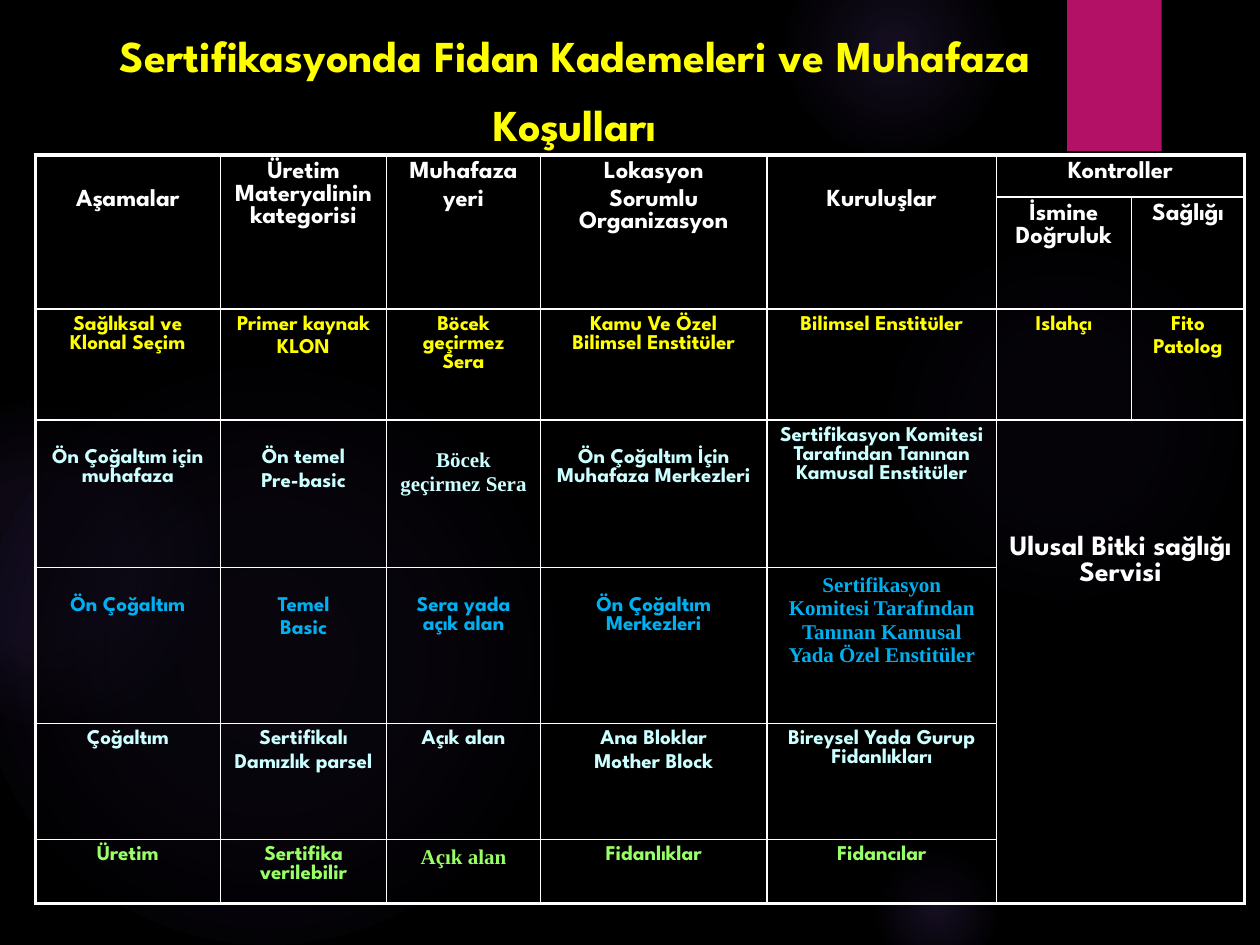
"""Build the slide on sapling stages and storage conditions in certification."""
from pptx import Presentation
from pptx.dml.color import RGBColor
from pptx.enum.shapes import MSO_SHAPE as Shape
from pptx.enum.text import MSO_ANCHOR as Anchor, PP_ALIGN as Align
from pptx.oxml import parse_xml
from pptx.oxml.ns import nsdecls, qn
from pptx.util import Inches, Pt


class Theme:
    black, white, yellow = "000000", "FFFFFF", "FFFF00"
    ice, blue, green = "CCFFFF", "00B0F0", "99FF66"
    glow, accent = "9B6BF2", "B31166"
    sans, serif = "League Spartan", "Times New Roman"
    title, service, header, body = 25.2, 16, 14, 12
    thick, thin = 2.25, 1


def write_text(frame, text, size, colour, font):
    frame.word_wrap = True
    frame.text = text
    for para in frame.paragraphs:
        para.alignment = Align.CENTER
        para.space_before = Pt(size * 0.2)
        for span in para.runs:
            span.font.size = Pt(size)
            span.font.bold = True
            span.font.name = font
            span.font.color.rgb = RGBColor.from_string(colour)


def style_cell(cell, edges):
    cell.fill.solid()
    cell.fill.fore_color.rgb = RGBColor.from_string(Theme.black)
    props = cell._tc.get_or_add_tcPr()
    colour = props.find(".//" + qn("a:srgbClr"))
    colour.append(parse_xml(f'<a:alpha {nsdecls("a")} val="50000"/>'))
    for place, (side, outer) in enumerate(edges.items()):
        width = Pt(Theme.thick if outer else Theme.thin)
        props.insert(place, parse_xml(
            f'<a:ln{side} {nsdecls("a")} w="{width}"><a:solidFill>'
            f'<a:srgbClr val="{Theme.white}"/></a:solidFill></a:ln{side}>'))


deck = Presentation()
deck.slide_width, deck.slide_height = Inches(10), Inches(7.5)
page = deck.slides.add_slide(deck.slide_layouts[6])
page.background.fill.solid()
page.background.fill.fore_color.rgb = RGBColor.from_string(Theme.black)

glows = [
    (6.89, 1.83, 3.08, [(0, 7), (36, 6), (69, 0)]),
    (6.22, -0.5, 1.75, [(0, 14), (36, 7), (73, 0)]),
    (6.89, 6.67, 1.08, [(0, 14), (36, 7), (66, 0)]),
    (-0.17, 2.92, 4.58, [(0, 11), (36, 10), (75, 0)]),
    (-0.92, 3.17, 2.58, [(0, 8), (36, 8), (72, 0)]),
]
for left, top, size, stops in glows:
    glow = page.shapes.add_shape(
        Shape.OVAL, Inches(left), Inches(top), Inches(size), Inches(size))
    glow.shadow.inherit = False
    glow.line.fill.background()
    stop_xml = "".join(
        f'<a:gs pos="{position * 1000}"><a:srgbClr val="{Theme.glow}">'
        f'<a:alpha val="{alpha * 1000}"/></a:srgbClr></a:gs>'
        for position, alpha in stops)
    glow._element.spPr.find(qn("a:prstGeom")).addnext(parse_xml(
        f'<a:gradFill {nsdecls("a")}><a:gsLst>{stop_xml}</a:gsLst>'
        '<a:path path="circle"><a:fillToRect l="50000" t="50000" r="50000" b="50000"/>'
        '</a:path></a:gradFill>'))

ribbon = page.shapes.add_shape(
    Shape.RECTANGLE, Inches(8.47), Inches(0), Inches(0.75), Inches(1.2))
ribbon.shadow.inherit = False
ribbon.line.fill.background()
ribbon.fill.solid()
ribbon.fill.fore_color.rgb = RGBColor.from_string(Theme.accent)

title = page.shapes.add_textbox(Inches(0.43), Inches(0.21), Inches(8.27), Inches(0.87))
write_text(title.text_frame, "Sertifikasyonda Fidan Kademeleri ve Muhafaza Koşulları",
           Theme.title, Theme.yellow, Theme.sans)
title.text_frame.vertical_anchor = Anchor.MIDDLE
title.text_frame.paragraphs[0].space_before = Pt(0)
title.text_frame.paragraphs[0].line_spacing = 1.3

widths = [1.47, 1.32, 1.22, 1.8, 1.82, 1.07, 0.9]
heights = [0.31, 0.89, 0.88, 1.17, 1.24, 0.92, 0.51]
rows = [
    (Theme.white, ["Aşamalar", "Üretim Materyalinin kategorisi", "Muhafaza\nyeri",
                   "Lokasyon\nSorumlu Organizasyon", "Kuruluşlar", "Kontroller", ""]),
    (Theme.white, ["", "", "", "", "", "İsmine Doğruluk", "Sağlığı"]),
    (Theme.yellow, ["Sağlıksal ve Klonal Seçim", "Primer kaynak\nKLON",
                    "Böcek geçirmez Sera", "Kamu Ve Özel Bilimsel Enstitüler",
                    "Bilimsel Enstitüler", "Islahçı", "Fito\nPatolog"]),
    (Theme.ice, ["Ön Çoğaltım için muhafaza", "Ön temel\nPre-basic",
                 "Böcek geçirmez Sera", "Ön Çoğaltım İçin Muhafaza Merkezleri",
                 "Sertifikasyon Komitesi Tarafından Tanınan Kamusal Enstitüler",
                 "Ulusal Bitki sağlığı Servisi", ""]),
    (Theme.blue, ["Ön Çoğaltım", "Temel\nBasic", "Sera yada açık alan",
                  "Ön Çoğaltım Merkezleri",
                  "Sertifikasyon Komitesi Tarafından Tanınan Kamusal Yada Özel Enstitüler",
                  "", ""]),
    (Theme.ice, ["Çoğaltım", "Sertifikalı\nDamızlık parsel", "Açık alan",
                 "Ana Bloklar\nMother Block", "Bireysel Yada Gurup Fidanlıkları", "", ""]),
    (Theme.green, ["Üretim", "Sertifika verilebilir", "Açık alan",
                   "Fidanlıklar", "Fidancılar", "", ""]),
]
service_cell = (3, 5)
serif_cells = {(3, 2), (4, 4), (6, 2)}
drops = {(0, 0): 0.22, (0, 4): 0.22, service_cell: 0.87}
drops.update({(row, column): 0.18 for row in (3, 4) for column in range(4)})

table = page.shapes.add_table(
    len(heights), len(widths), Inches(0.28), Inches(1.23),
    Inches(sum(widths)), Inches(sum(heights))).table
table.first_row = table.horz_banding = False
for column, width in zip(table.columns, widths):
    column.width = Inches(width)
for row, height in zip(table.rows, heights):
    row.height = Inches(height)
for column in range(5):
    table.cell(0, column).merge(table.cell(1, column))
table.cell(0, 5).merge(table.cell(0, 6))
table.cell(3, 5).merge(table.cell(6, 6))

for row, (colour, texts) in enumerate(rows):
    for column, text in enumerate(texts):
        cell = table.cell(row, column)
        right = column + (cell.span_width if cell.is_merge_origin else 1)
        bottom = row + (cell.span_height if cell.is_merge_origin else 1)
        style_cell(cell, {"L": column == 0, "R": right == len(widths),
                          "T": row == 0, "B": bottom == len(heights)})
        if cell.is_spanned:
            continue
        size = Theme.header if row < 2 else Theme.body
        if (row, column) == service_cell:
            size, colour = Theme.service, Theme.white
        font = Theme.serif if (row, column) in serif_cells else Theme.sans
        write_text(cell.text_frame, text, size, colour, font)
        cell.margin_top = Inches(0.05 + drops.get((row, column), 0))

deck.save("out.pptx")
